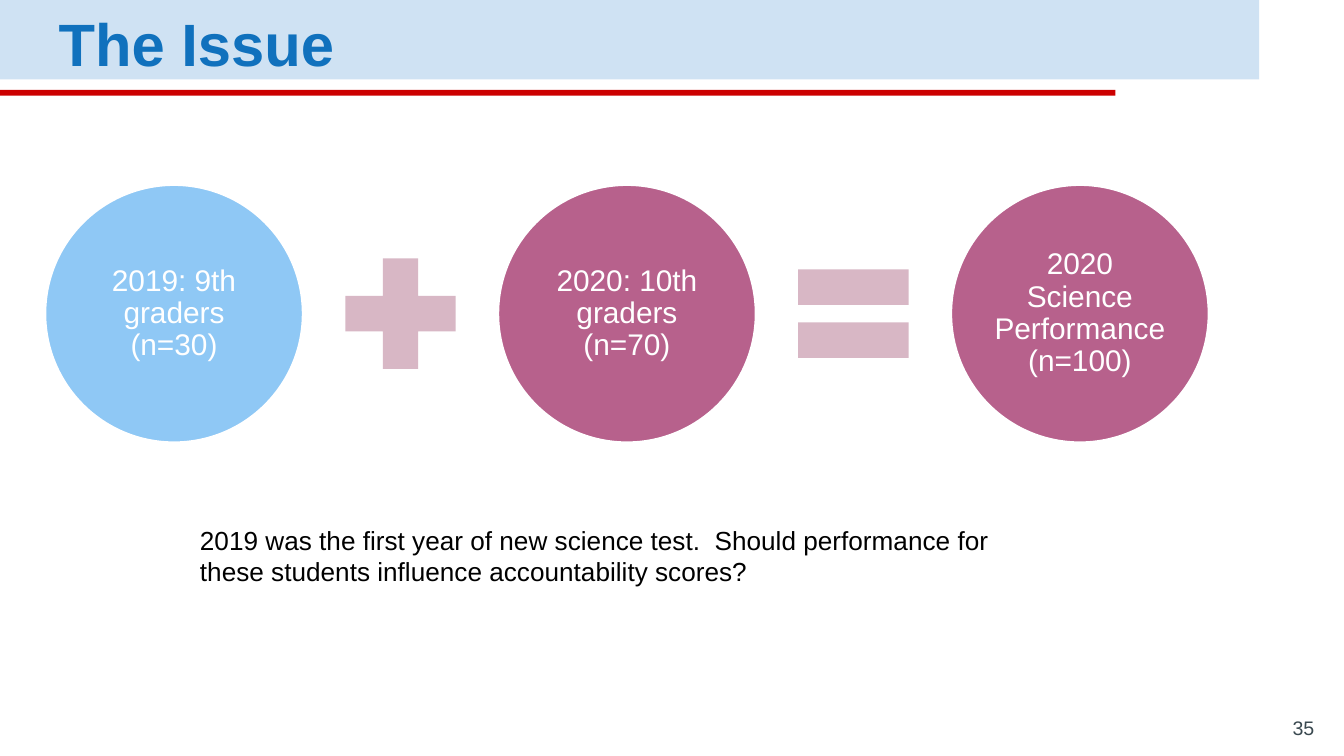
from pptx import Presentation
from pptx import util as u
from pptx.dml import color
from pptx.enum import shapes, text

HUES = {
    "band": "CFE2F3", "rule": "CC0000", "title": "1071BD", "page": "3A4950",
    "sky": "8FC8F5", "plum": "B7618C", "sign": "D8B7C5",
    "white": "FFFFFF", "black": "000000",
}
KIND = shapes.MSO_SHAPE
ALIGN = text.PP_ALIGN
ANCHOR = text.MSO_ANCHOR

DISC, SIGN, GAP = 4.9, 2.84, 0.41
LEFT, MID = 0.84, 5.93
GROUPS = [
    ("2019: 9th graders (n=30)", "sky"),
    ("2020: 10th graders (n=70)", "plum"),
    ("2020 Science Performance (n=100)", "plum"),
]
SIGNS = [KIND.MATH_PLUS, KIND.MATH_EQUAL]


def rgb(name):
    return color.RGBColor.from_string(HUES[name])


def place(item, x, y, w, h):
    item.left, item.top, item.width, item.height = map(u.Cm, (x, y, w, h))


def write(item, words, size, hue, align=ALIGN.LEFT, anchor=ANCHOR.TOP,
          pad=(0.25, 0.13), bold=False):
    frame = item.text_frame
    frame.text = words
    frame.word_wrap = True
    frame.auto_size = text.MSO_AUTO_SIZE.NONE
    frame.vertical_anchor = anchor
    frame.margin_left = frame.margin_right = u.Cm(pad[0])
    frame.margin_top = frame.margin_bottom = u.Cm(pad[1])
    para = frame.paragraphs[0]
    para.alignment = align
    for run in para.runs:
        run.font.name = "Arial"
        run.font.size = u.Pt(size)
        run.font.bold = bold
        run.font.color.rgb = rgb(hue)
    return para


def draw(page, kind, x, y, w, h, hue):
    item = page.shapes.add_shape(kind, *map(u.Cm, (x, y, w, h)))
    item.shadow.inherit = False
    item.fill.solid()
    item.fill.fore_color.rgb = rgb(hue)
    item.line.fill.background()
    return item


def note(page, x, y, w, h, *args, **style):
    box = page.shapes.add_textbox(*map(u.Cm, (x, y, w, h)))
    write(box, *args, **style)


def head(page, words):
    draw(page, KIND.RECTANGLE, 0, 0, 23.8, 1.5, "band")
    draw(page, KIND.RECTANGLE, 0, 1.7, 21.08, 0.11, "rule")
    title = page.shapes.title
    title.element.getparent().append(title.element)
    place(title, 0.86, 0.08, 22.94, 1.24)
    para = write(title, words, 32, "title", anchor=ANCHOR.MIDDLE,
                 pad=(0.25, 0.25), bold=True)
    para.line_spacing = 1.15
    para.space_after = u.Pt(16)


def disc(page, x, words, hue):
    item = draw(page, KIND.OVAL, x, MID - DISC / 2, DISC, DISC, hue)
    item.line.color.rgb = rgb("white")
    item.line.width = u.Pt(2)
    para = write(item, words, 16, "white", ALIGN.CENTER, ANCHOR.MIDDLE,
                 pad=(0.05, 0.05))
    para.line_spacing = 0.9


def total(page):
    step = DISC + SIGN + 2 * GAP
    for i, (words, hue) in enumerate(GROUPS):
        disc(page, LEFT + i * step, words, hue)
    for i, kind in enumerate(SIGNS):
        x = LEFT + i * step + DISC + GAP
        draw(page, kind, x, MID - SIGN / 2, SIGN, SIGN, "sign")


def main():
    deck = Presentation()
    deck.slide_width, deck.slide_height = u.Cm(25.4), u.Cm(14.29)
    page = deck.slides.add_slide(deck.slide_layouts[5])
    head(page, "The Issue")
    total(page)
    note(page, 3.53, 9.78, 16.61, 1.45,
         "2019 was the first year of new science test.  Should performance "
         "for these students influence accountability scores?", 14, "black")
    note(page, 23.57, 13.56, 1.52, 0.66, "35", 10.5, "page",
         align=ALIGN.RIGHT, anchor=ANCHOR.BOTTOM, pad=(0.25, 0.25))
    deck.save("out.pptx")


if __name__ == "__main__":
    main()
